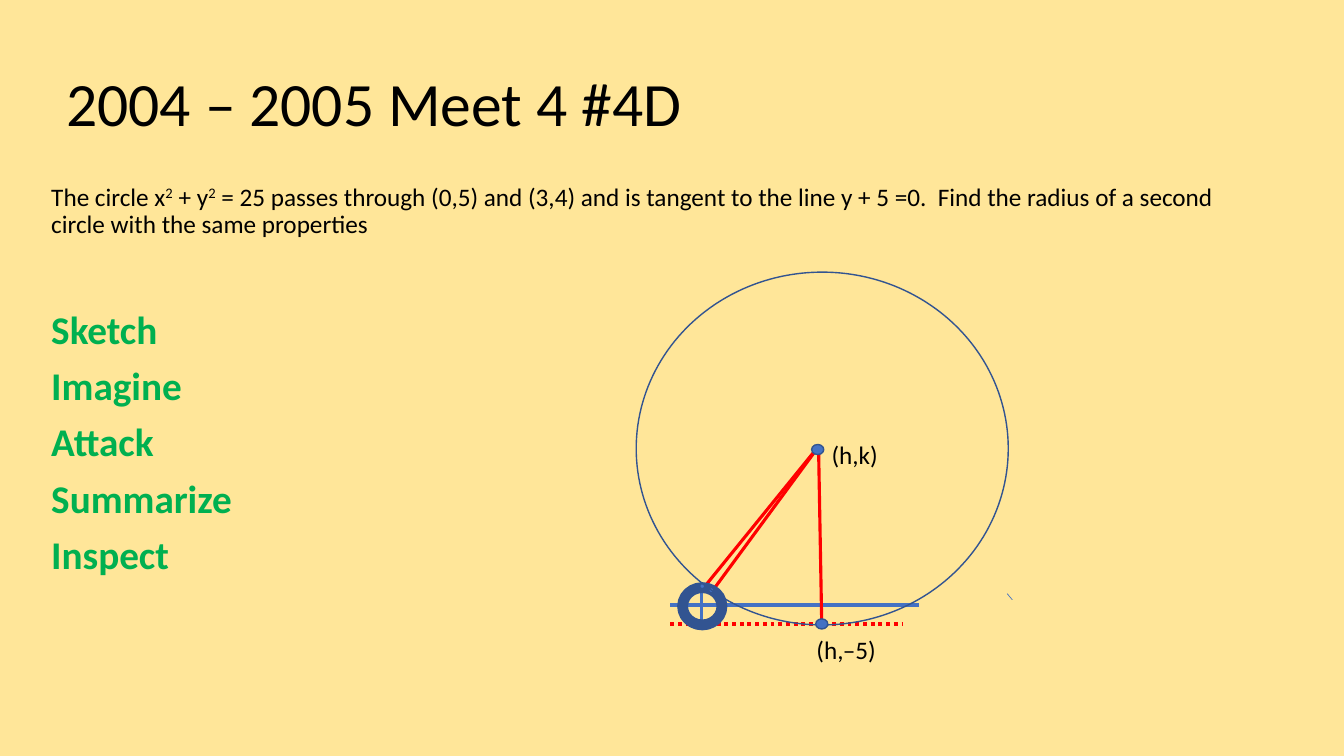
from pptx import Presentation
from pptx.dml.color import RGBColor
from pptx.enum.dml import MSO_LINE
from pptx.enum.shapes import MSO_CONNECTOR, MSO_SHAPE
from pptx.enum.text import MSO_ANCHOR
from pptx.oxml.ns import qn
from pptx.util import Inches, Pt
from lxml import etree

STRAIGHT = MSO_CONNECTOR.STRAIGHT
OVAL = MSO_SHAPE.OVAL
MIDDLE, TOP = MSO_ANCHOR.MIDDLE, MSO_ANCHOR.TOP
DOTTED = MSO_LINE.ROUND_DOT  # written as sysDot

CREAM = RGBColor(0xFF, 0xE6, 0x99)
BLACK = RGBColor(0x00, 0x00, 0x00)
GREEN = RGBColor(0x00, 0xB0, 0x50)
BLUE = RGBColor(0x44, 0x72, 0xC4)
NAVY = RGBColor(0x32, 0x54, 0x91)
RED = RGBColor(0xFF, 0x00, 0x00)

presentation = Presentation()
presentation.slide_width = Inches(13.33)
presentation.slide_height = Inches(7.5)
slide = presentation.slides.add_slide(presentation.slide_layouts[6])
slide.background.fill.solid()
slide.background.fill.fore_color.rgb = CREAM


def add_text_frame(left, top, width, height, anchor=TOP):
    box = slide.shapes.add_textbox(Inches(left), Inches(top), Inches(width), Inches(height))
    box.text_frame.word_wrap = True
    box.text_frame.vertical_anchor = anchor
    return box.text_frame


def style_paragraph(paragraph, size, color=BLACK, bold=False):
    paragraph.font.name = "Calibri"
    paragraph.font.size = Pt(size)
    paragraph.font.color.rgb = color
    paragraph.font.bold = bold


# Title
title = add_text_frame(0.56, 0.33, 11.5, 1.45, MIDDLE).paragraphs[0]
title.text = "2004 – 2005 Meet 4 #4D"
title.line_spacing = 0.9
style_paragraph(title, 44)

# Problem statement, with raised exponents
body = add_text_frame(0.41, 1.78, 12.01, 4.98)
problem = body.paragraphs[0]
problem.line_spacing = 0.9
style_paragraph(problem, 18)
pieces = [
    "The circle x", "2", " + y", "2",
    " = 25 passes through (0,5) and (3,4) and is tangent to the line y + 5 =0.  "
    "Find the radius of a second circle with the same properties",
]
for piece in pieces:
    run = problem.add_run()
    run.text = piece
    if piece == "2":
        run._r.get_or_add_rPr().set("baseline", "30000")

# Solving steps
for index, step in enumerate(["Sketch", "Imagine", "Attack", "Summarize", "Inspect"]):
    paragraph = body.add_paragraph()
    paragraph.text = step
    paragraph.line_spacing = 0.9
    paragraph.space_before = Pt(51 if index == 0 else 10)
    style_paragraph(paragraph, 28, GREEN, bold=True)

# Lines: start, end, colour, width, dash
lines = [
    ((9.99, 5.89), (10.04, 5.95), BLUE, 0.5, None),
    ((6.96, 5.78), (6.96, 6.25), BLUE, 2.5, None),
    ((6.65, 6), (9.12, 6), BLUE, 2.5, None),
    ((6.65, 6.19), (8.96, 6.19), RED, 2.75, DOTTED),
    ((8.1, 4.45), (6.98, 5.83), RED, 2.25, None),
    ((8.09, 4.47), (7.09, 5.83), RED, 2.25, None),
    ((8.12, 4.5), (8.15, 6.19), RED, 2.25, None),
]
for start, end, color, width, dash in lines:
    connector = slide.shapes.add_connector(STRAIGHT, *map(Inches, start + end))
    connector.line.color.rgb = color
    connector.line.width = Pt(width)
    if dash:
        connector.line.dash_style = dash
    etree.SubElement(connector._element.spPr, qn("a:effectLst"))

# Circles and points: left, top, width, height, line width, fill
ellipses = [
    (6.77, 5.83, 0.39, 0.37, 7.75, None),
    (6.94, 5.79, 0.05, 0.05, 1, BLUE),
    (7.03, 5.83, 0.05, 0.05, 1, BLUE),
    (6.31, 2.7, 3.69, 3.5, 1, None),
    (8.05, 4.41, 0.12, 0.1, 1, BLUE),
    (8.09, 6.14, 0.12, 0.1, 1, BLUE),
]
for left, top, width, height, line_width, fill in ellipses:
    ellipse = slide.shapes.add_shape(OVAL, Inches(left), Inches(top), Inches(width), Inches(height))
    ellipse.shadow.inherit = False
    ellipse.line.color.rgb = NAVY
    ellipse.line.width = Pt(line_width)
    if fill:
        ellipse.fill.solid()
        ellipse.fill.fore_color.rgb = fill
    else:
        ellipse.fill.background()

# Point labels
for left, top, label in [(8.15, 4.31, "(h,k)"), (8, 6.24, "(h,–5)")]:
    paragraph = add_text_frame(left, top, 0.9, 0.4).paragraphs[0]
    paragraph.text = label
    style_paragraph(paragraph, 18)

presentation.save("out.pptx")
